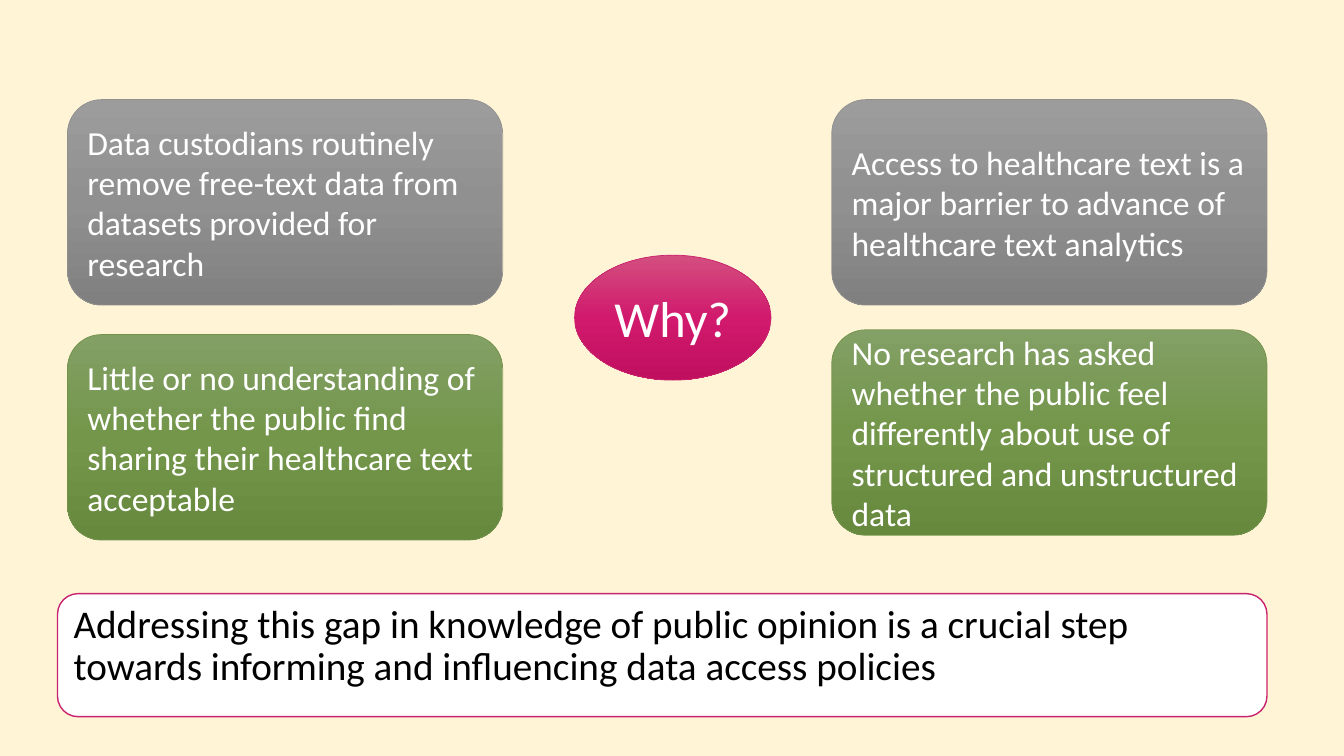
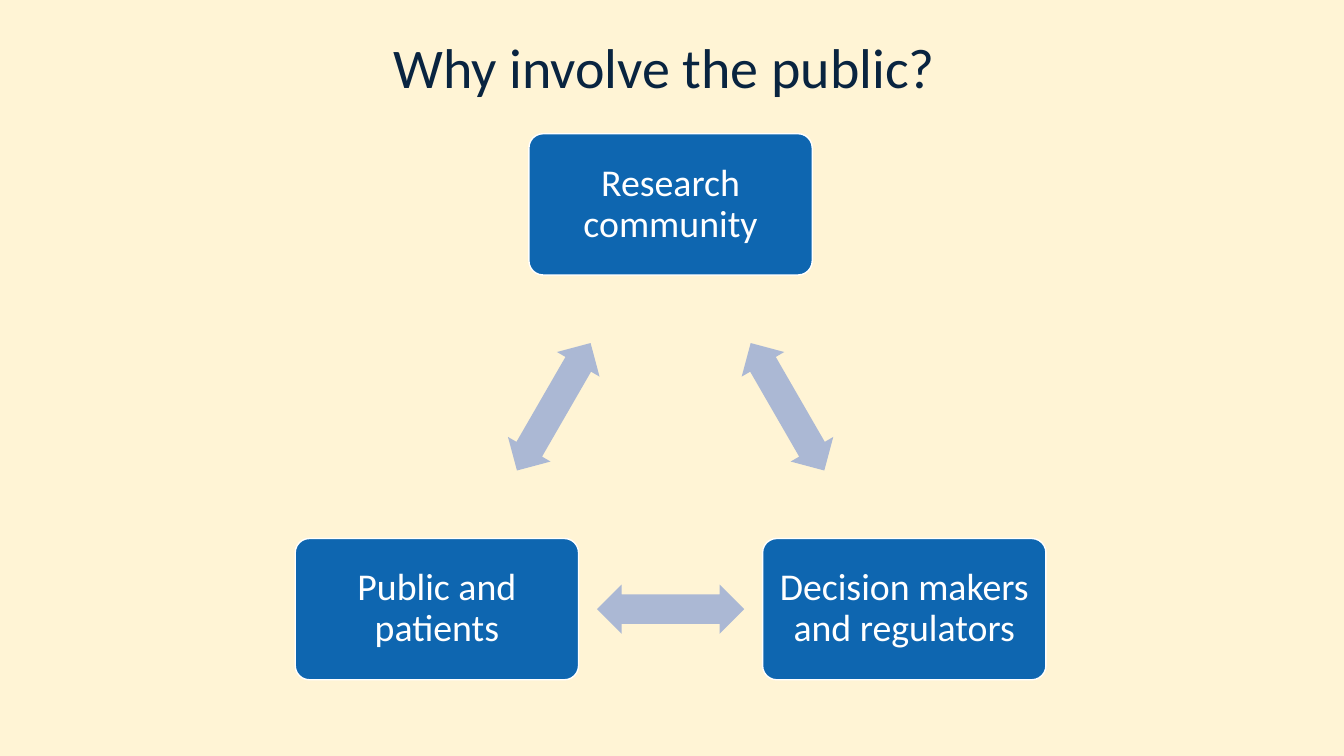
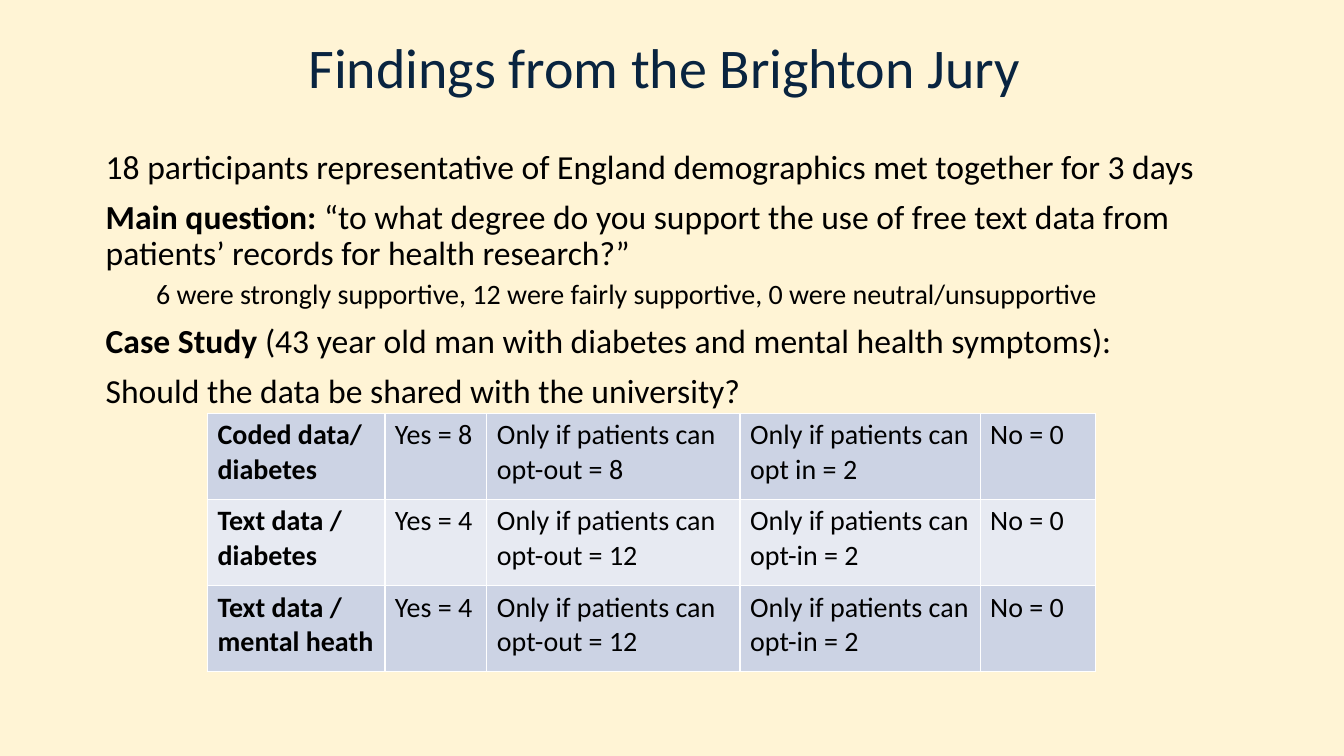
from copy import deepcopy
from dataclasses import dataclass
from math import cos, radians, sin

from lxml.etree import SubElement
from pptx import Presentation
from pptx.dml.color import RGBColor
from pptx.enum.shapes import MSO_SHAPE
from pptx.enum.text import MSO_ANCHOR, MSO_AUTO_SIZE, PP_ALIGN
from pptx.oxml.ns import qn
from pptx.util import Cm, Pt


@dataclass(frozen=True)
class Theme:
    font: str = "Calibri"
    background: str = "FFF4D5"
    title: str = "092440"
    text: str = "000000"
    white: str = "FFFFFF"
    pink: str = "C9226E"
    blue: str = "0E66B0"
    arrow: str = "ABB8D4"
    gray_line: str = "919091"
    green_line: str = "73934D"
    gray_gradient: tuple = ("9D9C9D", "919091", "818081")
    green_gradient: tuple = ("83A066", "73964A", "67893E")
    pink_gradient: tuple = ("D34F7F", "D11A6D", "C10F60")
    bands: tuple = ("CCD3E4", "E7EAF2")
    title_size: int = 40
    question_size: int = 36
    statement_size: int = 28
    box_size: int = 27
    body_size: int = 24
    small_size: int = 20


theme = Theme()


def write(paragraph, parts, size, colour=theme.white, **paragraph_format):
    for name, value in paragraph_format.items():
        setattr(paragraph, name, value)
    for text, bold in parts:
        run = paragraph.add_run()
        run.text = text
        for name, value in {"name": theme.font, "size": Pt(size), "bold": bold}.items():
            setattr(run.font, name, value)
        run.font.color.rgb = RGBColor.from_string(colour)


def add_block(slide, kind, place, fills, line=None, line_width=0.5):
    shape = slide.shapes.add_shape(kind, *map(Cm, place))
    shape.shadow.inherit = False
    shape.text_frame.vertical_anchor = MSO_ANCHOR.MIDDLE
    if len(fills) == 1:
        shape.fill.solid()
        shape.fill.fore_color.rgb = RGBColor.from_string(fills[0])
    else:
        shape.fill.gradient()
        shape.fill.gradient_angle = 270
        stop_list = shape.element.find(".//" + qn("a:gsLst"))
        stop_list.append(deepcopy(stop_list[0]))
        for index, (stop, colour) in enumerate(zip(shape.fill.gradient_stops, fills)):
            stop.position = index / 2
            stop.color.rgb = RGBColor.from_string(colour)
    if line:
        shape.line.color.rgb = RGBColor.from_string(line)
        shape.line.width = Pt(line_width)
    else:
        shape.line.fill.background()
    return shape


presentation = Presentation()
presentation.slide_width = Cm(33.87)
presentation.slide_height = Cm(19.05)

master = presentation.slide_master
master.background.fill.solid()
master.background.fill.fore_color.rgb = RGBColor.from_string(theme.background)
master_title = master.placeholders[0]
for name, value in {"left": 1.02, "top": 0.89, "width": 31.75, "height": 2.21}.items():
    setattr(master_title, name, Cm(value))
master_title.text_frame.vertical_anchor = MSO_ANCHOR.TOP

content_layout = presentation.slide_layouts[1]
title_layout = presentation.slide_layouts[5]
reasons_slide = presentation.slides.add_slide(content_layout)
public_slide = presentation.slides.add_slide(title_layout)
findings_slide = presentation.slides.add_slide(content_layout)

unused_title = reasons_slide.shapes.title.element
unused_title.getparent().remove(unused_title)

for slide, title in (
    (public_slide, "Why involve the public? "),
    (findings_slide, "Findings from the Brighton Jury "),
):
    frame = slide.shapes.title.text_frame
    frame.auto_size = MSO_AUTO_SIZE.NONE
    write(frame.paragraphs[0], [(title, False)], theme.title_size, theme.title,
          alignment=PP_ALIGN.CENTER, line_spacing=0.9)

statement = [
    (0, theme.statement_size, [(
        "Addressing this gap in knowledge of public opinion is a crucial step "
        "towards informing and influencing data access policies", False)]),
]
findings = [
    (0, theme.body_size, [(
        "18 participants representative of England demographics met together for 3 days", False)]),
    (0, theme.body_size, [
        ("Main question: ", True),
        ("“to what degree do you support the use of free text data from "
         "patients’ records for health research?”", False)]),
    (1, theme.small_size, [(
        "6 were strongly supportive, 12 were fairly supportive, 0 were neutral/unsupportive", False)]),
    (0, theme.body_size, [
        ("Case Study ", True),
        ("(43 year old man with diabetes and mental health symptoms):", False)]),
    (0, theme.body_size, [("Should the data be shared with the university?", False)]),
]
for slide, place, lines in (
    (reasons_slide, (1.45, 14.96, 30.48, 3.1), statement),
    (findings_slide, (2.41, 3.66, 28.93, 13.23), findings),
):
    body = slide.placeholders[1]
    for name, value in zip(("left", "top", "width", "height"), place):
        setattr(body, name, Cm(value))
    frame = body.text_frame
    frame.auto_size = MSO_AUTO_SIZE.NONE
    for index, (level, size, parts) in enumerate(lines):
        paragraph = frame.add_paragraph() if index else frame.paragraphs[0]
        properties = paragraph._p.get_or_add_pPr()
        properties.set("marL", str(Cm(1.27 * level)))
        properties.set("indent", "0")
        SubElement(properties, qn("a:buNone"))
        space = (5 if level else 10) if index else 0
        write(paragraph, parts, size, theme.text, level=level,
              line_spacing=0.9, space_before=Pt(space))

statement_box = reasons_slide.placeholders[1]
geometry = SubElement(statement_box.element.spPr, qn("a:prstGeom"), prst="roundRect")
SubElement(geometry, qn("a:avLst"))
statement_box.fill.solid()
statement_box.fill.fore_color.rgb = RGBColor.from_string(theme.white)
statement_box.line.color.rgb = RGBColor.from_string(theme.pink)
statement_box.line.width = Pt(1)

gray = (theme.gray_gradient, theme.gray_line)
green = (theme.green_gradient, theme.green_line)
left_column, right_column = 1.7, 20.96
for left, top, (gradient, line), text in (
    (right_column, 2.51, gray,
     "Access to healthcare text is a major barrier to advance of healthcare text analytics"),
    (left_column, 2.51, gray,
     "Data custodians routinely remove free-text data from datasets provided for research"),
    (left_column, 8.43, green,
     "Little or no understanding of whether the public find sharing their healthcare text acceptable"),
    (right_column, 8.31, green,
     "No research has asked whether the public feel differently about use of "
     "structured and unstructured data"),
):
    card = add_block(reasons_slide, MSO_SHAPE.ROUNDED_RECTANGLE,
                     (left, top, 10.97, 5.18), gradient, line)
    write(card.text_frame.paragraphs[0], [(text, False)], theme.body_size,
          alignment=PP_ALIGN.LEFT)

question = add_block(reasons_slide, MSO_SHAPE.OVAL, (14.48, 6.43, 4.95, 3.15),
                     theme.pink_gradient, theme.pink)
write(question.text_frame.paragraphs[0], [("Why?", False)], theme.question_size,
      alignment=PP_ALIGN.CENTER)

center_x, center_y, radius = 16.9, 11.95, 6.8
box_width, box_height = 7.14, 3.56
arrow_width, arrow_height = 3.71, 1.24
groups = ("Research community", "Decision makers and regulators", "Public and patients")
for index, group in enumerate(groups):
    angle = radians(120 * index - 90)
    box = add_block(
        public_slide, MSO_SHAPE.ROUNDED_RECTANGLE,
        (center_x + radius * cos(angle) - box_width / 2,
         center_y + radius * sin(angle) - box_height / 2, box_width, box_height),
        (theme.blue,), theme.white, 1)
    box.adjustments[0] = 0.1
    for side in ("left", "top", "right", "bottom"):
        setattr(box.text_frame, "margin_" + side, Cm(0.28))
    write(box.text_frame.paragraphs[0], [(group, False)], theme.box_size,
          alignment=PP_ALIGN.CENTER, line_spacing=0.9)

    angle += radians(60)
    arrow = add_block(
        public_slide, MSO_SHAPE.LEFT_RIGHT_ARROW,
        (center_x + radius / 2 * cos(angle) - arrow_width / 2,
         center_y + radius / 2 * sin(angle) - arrow_height / 2, arrow_width, arrow_height),
        (theme.arrow,))
    arrow.rotation = 60 + 120 * index
    arrow.adjustments[0] = 0.6
    arrow.adjustments[1] = 0.5

answers = (
    ("Coded data/ diabetes", "Yes = 8", "Only if patients can opt-out = 8",
     "Only if patients can opt in = 2", "No = 0"),
    ("Text data / diabetes", "Yes = 4", "Only if patients can opt-out = 12",
     "Only if patients can opt-in = 2", "No = 0"),
    ("Text data / mental heath", "Yes = 4", "Only if patients can opt-out = 12",
     "Only if patients can opt-in = 2", "No = 0"),
)
column_widths = (4.47, 2.57, 6.38, 6.05, 2.9)
row_height = 2.17
table = findings_slide.shapes.add_table(
    len(answers), len(column_widths), Cm(5.23), Cm(10.41),
    Cm(sum(column_widths)), Cm(row_height * len(answers))).table
for name in ("first_row", "horz_banding"):
    setattr(table, name, False)
for column, width in zip(table.columns, column_widths):
    column.width = Cm(width)
for row_index, row in enumerate(answers):
    table.rows[row_index].height = Cm(row_height)
    for column_index, text in enumerate(row):
        cell = table.cell(row_index, column_index)
        cell.fill.solid()
        cell.fill.fore_color.rgb = RGBColor.from_string(theme.bands[row_index % 2])
        write(cell.text_frame.paragraphs[0], [(text, column_index == 0)],
              theme.small_size, theme.text)

presentation.save("out.pptx")
